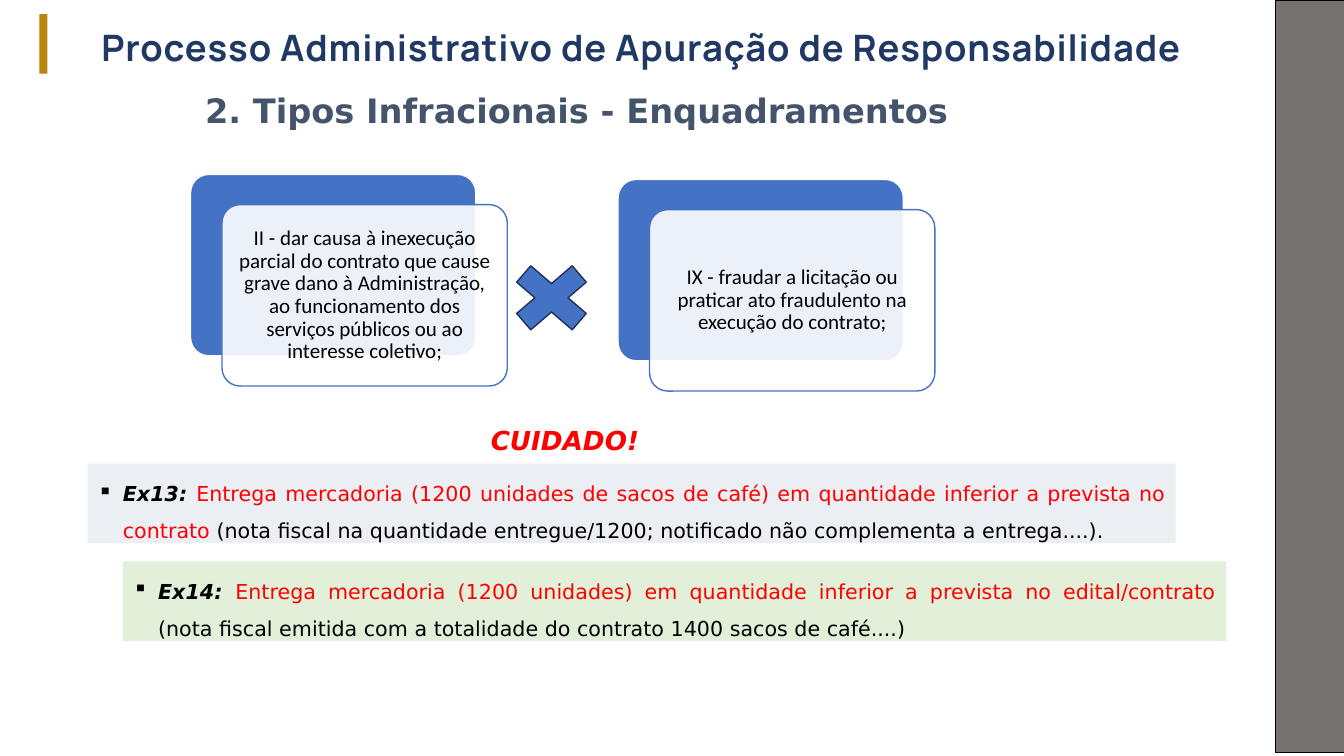
from lxml import etree
from pptx import Presentation
from pptx.dml.color import RGBColor
from pptx.enum.shapes import MSO_SHAPE
from pptx.enum.text import MSO_ANCHOR, MSO_AUTO_SIZE, PP_ALIGN
from pptx.oxml.ns import qn
from pptx.util import Inches, Pt

RECT, ROUND, CROSS = MSO_SHAPE.RECTANGLE, MSO_SHAPE.ROUNDED_RECTANGLE, MSO_SHAPE.MATH_MULTIPLY
TOP, MIDDLE = MSO_ANCHOR.TOP, MSO_ANCHOR.MIDDLE
CENTER, JUSTIFY = PP_ALIGN.CENTER, PP_ALIGN.JUSTIFY
GROW, FIXED = MSO_AUTO_SIZE.SHAPE_TO_FIT_TEXT, MSO_AUTO_SIZE.NONE

COLORS = {
    "white": "FFFFFF", "black": "000000", "red": "FF0000", "navy": "203864",
    "slate": "44546A", "blue": "4472C4", "outline": "1E3256", "gray": "767171",
    "gold": "B8860B", "mist": "EBEEF2", "green": "E2F0D9",
}

# Content: areas are left, top, width, height in percent of the slide
TITLE = "Processo Administrativo de Apuração de Responsabilidade"
TITLE_AREA = (0.98, 3.33, 93.55, 5.87)
SUBTITLE = "2. Tipos Infracionais - Enquadramentos"
SUBTITLE_AREA = (0, 10.13, 85.82, 6.4)
WARNING = "CUIDADO!"
WARNING_AREA = (35.78, 53.33, 12.9, 6.8)
SIDEBAR_AREA = (69.69, 44.93, 55.96, 9.73)
ACCENT_AREA = (2.93, 1.87, 0.6, 7.87)
CROSS_AREA = (37.06, 33.33, 7.95, 12.13)

CARD_SIZE = (21.23, 24)
CARD_SHIFT = (2.34, 4)
LABEL_INSET = (0.4, 0.7)
CARDS = [
    (14.18, 23.07, "II - dar causa à inexecução parcial do contrato que cause grave dano "
     "à Administração, ao funcionamento dos serviços públicos ou ao interesse coletivo;"),
    (45.99, 23.73, "IX - fraudar a licitação ou praticar ato fraudulento na execução do contrato;"),
]
EXAMPLES = [
    ((6.53, 61.33, 80.95, 10.53), "mist", "Ex13: ",
     "Entrega mercadoria (1200 unidades de sacos de café) em quantidade inferior "
     "a prevista no contrato",
     " (nota fiscal na quantidade entregue/1200; notificado não complementa a entrega....)."),
    ((9.15, 74.27, 82.07, 10.53), "green", "Ex14: ",
     "Entrega mercadoria (1200 unidades) em quantidade inferior a prevista no edital/contrato ",
     "(nota fiscal emitida com a totalidade do contrato 1400 sacos de café....)"),
]

# Text formats
TITLE_FONT = {"name": "Manrope", "size": Pt(26), "bold": True}
SUBTITLE_FONT = {"name": "DejaVu Sans", "size": Pt(24), "bold": True}
WARNING_FONT = {"name": "DejaVu Sans", "size": Pt(18.7), "bold": True, "italic": True}
CARD_FONT = {"name": "Calibri", "size": Pt(15)}
BODY_FONT = {"name": "DejaVu Sans", "size": Pt(14.7), "bold": False, "italic": False}
LEAD_FONT = {**BODY_FONT, "bold": True, "italic": True}

deck = Presentation()
deck.slide_width, deck.slide_height = Inches(13.33), Inches(7.5)
page = deck.slides.add_slide(deck.slide_layouts[5])


def color(name):
    return RGBColor.from_string(COLORS[name])


def place(area):
    sides = (deck.slide_width, deck.slide_height) * 2
    return [int(share * side / 100) for share, side in zip(area, sides)]


def add_block(kind, area, fill, line=None, weight=1):
    block = page.shapes.add_shape(kind, *place(area))
    block.shadow.inherit = False
    block.fill.solid()
    block.fill.fore_color.rgb = color(fill)
    if line:
        block.line.color.rgb = color(line)
        block.line.width = Pt(weight)
    else:
        block.line.fill.background()
    if kind == ROUND:
        block.adjustments[0] = 0.1
    return block


def write(shape, spans, align, spacing=None, inset=(0.1, 0.05), anchor=TOP, fit=GROW, bullet=None):
    frame = shape.text_frame
    across, down = map(Inches, inset)
    settings = {"word_wrap": True, "auto_size": fit, "vertical_anchor": anchor,
                "margin_left": across, "margin_right": across,
                "margin_top": down, "margin_bottom": down}
    for name, value in settings.items():
        setattr(frame, name, value)
    para = frame.paragraphs[0]
    para.alignment = align
    if spacing:
        para.line_spacing = spacing
    if bullet:
        properties = para._p.get_or_add_pPr()
        properties.set("marL", str(Inches(0.25)))
        properties.set("indent", str(-Inches(0.25)))
        etree.SubElement(properties, qn("a:buChar")).set("char", bullet)
    for text, font, tint in spans:
        span = para.add_run()
        span.text = text
        for name, value in font.items():
            setattr(span.font, name, value)
        span.font.color.rgb = color(tint)
    return para


# Side bar and subtitle
add_block(RECT, SIDEBAR_AREA, "gray", "black", 0.75).rotation = 90
subtitle = page.shapes.add_textbox(*place(SUBTITLE_AREA))
write(subtitle, [(SUBTITLE, SUBTITLE_FONT, "slate")], CENTER, Pt(38.3), inset=(0, 0))

# Warning
warning = add_block(RECT, WARNING_AREA, "white")
write(warning, [(WARNING, WARNING_FONT, "red")], JUSTIFY, 1.5)

# Layered cards and the cross between them
for left, top, text in CARDS:
    add_block(ROUND, (left, top, *CARD_SIZE), "blue", "white")
    front = (left + CARD_SHIFT[0], top + CARD_SHIFT[1])
    veil = add_block(ROUND, (*front, *CARD_SIZE), "white", "blue")
    tint = veil.fill._xPr.find(qn("a:solidFill"))[0]
    etree.SubElement(tint, qn("a:alpha")).set("val", "90000")
    corner = [start + gap for start, gap in zip(front, LABEL_INSET)]
    size = [side - 2 * gap for side, gap in zip(CARD_SIZE, LABEL_INSET)]
    label = page.shapes.add_textbox(*place((*corner, *size)))
    write(label, [(text, CARD_FONT, "black")], CENTER, 0.9, (0.06, 0.06), MIDDLE, FIXED)
add_block(CROSS, CROSS_AREA, "blue", "outline")

# Examples
for area, fill, lead, fault, detail in EXAMPLES:
    spans = [(lead, LEAD_FONT, "black"), (fault, BODY_FONT, "red"), (detail, BODY_FONT, "black")]
    write(add_block(RECT, area, fill), spans, JUSTIFY, 1.5, bullet="▪")

# Title with its accent bar
title = page.shapes.title
title.left, title.top, title.width, title.height = place(TITLE_AREA)
heading = write(title, [(TITLE, TITLE_FONT, "navy")], CENTER, inset=(0, 0))
heading.runs[0].font._element.set("spc", "60")
add_block(RECT, ACCENT_AREA, "gold")

deck.save("out.pptx")
